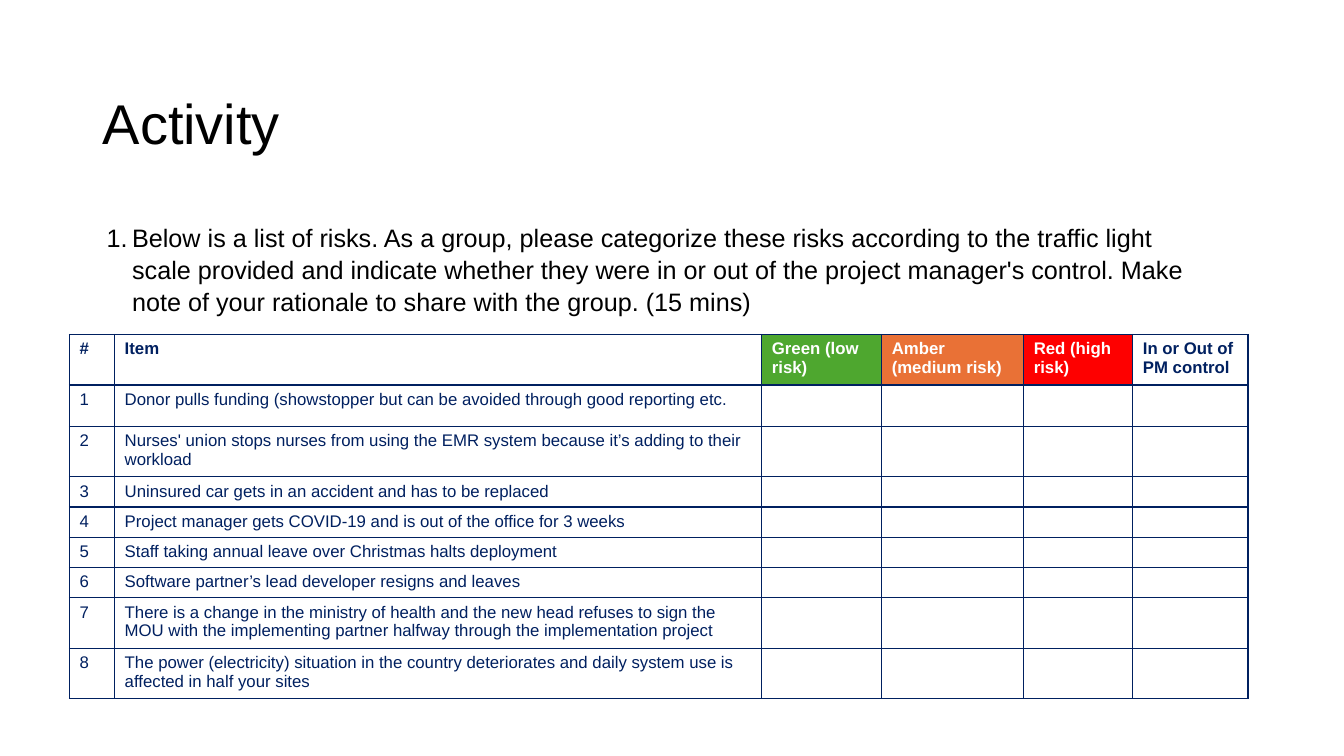
import pptx
import pptx.util
import pptx.dml.color
import pptx.enum.text
import pptx.oxml.ns
from lxml import etree

Cm = pptx.util.Cm
qn = pptx.oxml.ns.qn
THEME = {
    "font": "Arial",
    "black": "000000", "white": "FFFFFF", "navy": "002060",
    "green": "4EA72F", "amber": "E97136", "red": "FE0000",
    "title": 40, "body": 18, "table": 12, "border": 1,
}


def write(p, text, size="table", color="navy", bold=False, spacing=None):
    if spacing:
        p.line_spacing = spacing
    r = p.add_run()
    r.text = text
    r.font.name = THEME["font"]
    r.font.size = pptx.util.Pt(THEME[size])
    r.font.bold = bold
    r.font.color.rgb = pptx.dml.color.RGBColor.from_string(THEME[color])


def style_cell(cell, fill):
    cell.fill.solid()
    cell.fill.fore_color.rgb = pptx.dml.color.RGBColor.from_string(THEME[fill])
    tcPr = cell._tc.get_or_add_tcPr()
    for i, side in enumerate(("lnL", "lnR", "lnT", "lnB")):
        ln = etree.Element(qn("a:" + side), w=str(pptx.util.Pt(THEME["border"])))
        line_fill = etree.SubElement(ln, qn("a:solidFill"))
        etree.SubElement(line_fill, qn("a:srgbClr"), val=THEME["navy"])
        tcPr.insert(i, ln)


prs = pptx.Presentation()
prs.slide_width, prs.slide_height = Cm(33.87), Cm(19.05)
s = prs.slides.add_slide(prs.slide_layouts[6])

title = s.shapes.add_textbox(Cm(2.34), Cm(1.02), Cm(28.02), Cm(4.34))
tf = title.text_frame
tf.word_wrap = True
tf.vertical_anchor = pptx.enum.text.MSO_ANCHOR.MIDDLE
write(tf.paragraphs[0], "Activity", size="title", color="black", spacing=0.9)

body = s.shapes.add_textbox(Cm(2.44), Cm(5.44), Cm(27.89), Cm(10.82))
tf = body.text_frame
tf.word_wrap = True
p = tf.paragraphs[0]
pPr = p._p.get_or_add_pPr()
pPr.set("marL", str(Cm(0.64)))
pPr.set("indent", str(-Cm(0.64)))
etree.SubElement(pPr, qn("a:buFont"), typeface=THEME["font"])
etree.SubElement(pPr, qn("a:buAutoNum"), type="arabicPeriod")
write(
    p,
    "Below is a list of risks. As a group, please categorize these risks according to "
    "the traffic light scale provided and indicate whether they were in or out of the "
    "project manager's control. Make note of your rationale to share with the group. (15 mins)",
    size="body", color="black", spacing=1.05,
)

headers = [
    ("#", "white", "navy"),
    ("Item", "white", "navy"),
    ("Green (low risk)", "green", "white"),
    ("Amber (medium risk)", "amber", "white"),
    ("Red (high risk)", "red", "white"),
    ("In or Out of PM control", "white", "navy"),
]
risks = [
    "Donor pulls funding (showstopper but can be avoided through good reporting etc.",
    "Nurses' union stops nurses from using the EMR system because it’s adding to their workload",
    "Uninsured car gets in an accident and has to be replaced",
    "Project manager gets COVID-19 and is out of the office for 3 weeks",
    "Staff taking annual leave over Christmas halts deployment",
    "Software partner’s lead developer resigns and leaves",
    "There is a change in the ministry of health and the new head refuses to sign the "
    "MOU with the implementing partner halfway through the implementation project",
    "The power (electricity) situation in the country deteriorates and daily system use is "
    "affected in half your sites",
]
widths = [1.14, 16.31, 3.02, 3.58, 2.75, 2.9]
heights = [1.21, 1.04, 1.21, 0.73, 0.73, 0.73, 0.73, 1.21, 1.21]

frame = s.shapes.add_table(
    len(heights), len(widths), Cm(1.75), Cm(8.43), Cm(sum(widths)), Cm(sum(heights))
)
table = frame.table
for column, width in zip(table.columns, widths):
    column.width = Cm(width)
for row, height in zip(table.rows, heights):
    row.height = Cm(height)

for col, (text, fill, color) in enumerate(headers):
    cell = table.cell(0, col)
    style_cell(cell, fill)
    write(cell.text_frame.paragraphs[0], text, color=color, bold=True)

for number, risk in enumerate(risks, 1):
    texts = [str(number), risk] + [""] * (len(headers) - 2)
    for col, text in enumerate(texts):
        cell = table.cell(number, col)
        style_cell(cell, "white")
        p = cell.text_frame.paragraphs[0]
        if text:
            write(p, text)
        else:
            etree.SubElement(p._p, qn("a:endParaRPr"), sz=str(THEME["table"] * 100))

prs.save("out.pptx")
